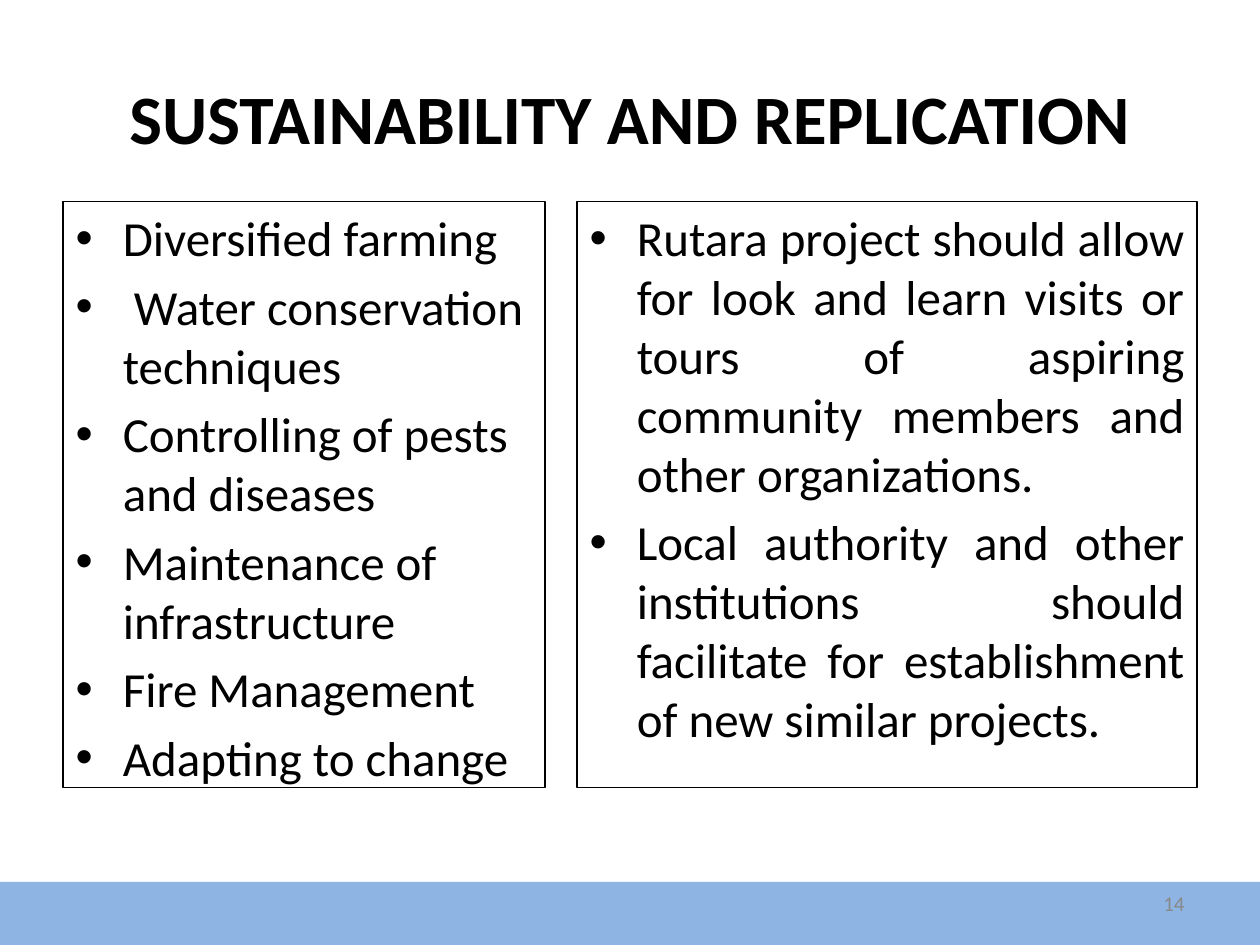
import pptx
import pptx.util
import pptx.dml.color
import pptx.enum.shapes
import pptx.enum.text
from dataclasses import dataclass

Cm, Pt = pptx.util.Cm, pptx.util.Pt
ALIGN = pptx.enum.text.PP_ALIGN
ANCHOR = pptx.enum.text.MSO_ANCHOR

TITLE = "SUSTAINABILITY AND REPLICATION"
PRACTICES = [
    "Diversified farming",
    " Water conservation techniques",
    "Controlling of pests and diseases",
    "Maintenance of infrastructure",
    "Fire Management",
    "Adapting to change",
]
REPLICATION = [
    "Rutara project should allow for look and learn visits or tours of "
    "aspiring community members and other organizations.",
    "Local authority and other institutions should facilitate for "
    "establishment of new similar projects.",
]
PAGE_NUMBER = "14"


@dataclass(frozen=True)
class Theme:
    font: str = "Calibri"
    ink: str = "000000"
    band: str = "8EB4E3"
    muted: str = "898989"
    title_size: float = 39.6
    body_size: float = 28
    number_size: float = 12
    outline: float = 0.75


THEME = Theme()
PAGE_WIDTH, PAGE_HEIGHT = 25.4, 19.05
MARGIN = 1.27
CONTENT_WIDTH = PAGE_WIDTH - 2 * MARGIN
LIST_TOP, LIST_HEIGHT = 4.06, 11.81
LEFT_WIDTH, GUTTER = 9.72, 0.64
RIGHT_LEFT = MARGIN + LEFT_WIDTH + GUTTER
RIGHT_WIDTH = PAGE_WIDTH - MARGIN - RIGHT_LEFT
BAND_TOP = 17.78


def color(value):
    return pptx.dml.color.RGBColor.from_string(value)


def place(box, left, top, width, height):
    box.left, box.top = Cm(left), Cm(top)
    box.width, box.height = Cm(width), Cm(height)


def write(box, lines, size, ink, align, anchor, bold=False):
    """Fill a box with one formatted paragraph per line."""
    frame = box.text_frame
    frame.word_wrap = True
    frame.auto_size = pptx.enum.text.MSO_AUTO_SIZE.NONE
    frame.vertical_anchor = anchor
    for index, line in enumerate(lines):
        para = frame.add_paragraph() if index else frame.paragraphs[0]
        para.alignment = align
        span = para.add_run()
        span.text = line
        span.font.name = THEME.font
        span.font.size = Pt(size)
        span.font.bold = bold
        span.font.color.rgb = color(ink)


def add_list(box, left, width, lines, align):
    """Turn a body placeholder into an outlined bullet list."""
    place(box, left, LIST_TOP, width, LIST_HEIGHT)
    box.line.color.rgb = color(THEME.ink)
    box.line.width = Pt(THEME.outline)
    write(box, lines, THEME.body_size, THEME.ink, align, ANCHOR.TOP)


def main():
    deck = pptx.Presentation()
    deck.slide_width, deck.slide_height = Cm(PAGE_WIDTH), Cm(PAGE_HEIGHT)
    page = deck.slides.add_slide(deck.slide_layouts.get_by_name("Two Content"))
    title, practices, replication = page.placeholders

    place(title, MARGIN, 0.76, CONTENT_WIDTH, 3.18)
    write(title, [TITLE], THEME.title_size, THEME.ink,
          ALIGN.CENTER, ANCHOR.MIDDLE, bold=True)

    add_list(practices, MARGIN, LEFT_WIDTH, PRACTICES, ALIGN.LEFT)
    add_list(replication, RIGHT_LEFT, RIGHT_WIDTH, REPLICATION, ALIGN.JUSTIFY)

    band = page.shapes.add_shape(
        pptx.enum.shapes.MSO_SHAPE.RECTANGLE,
        0, Cm(BAND_TOP), Cm(PAGE_WIDTH), Cm(PAGE_HEIGHT - BAND_TOP))
    band.shadow.inherit = False
    band.fill.solid()
    band.fill.fore_color.rgb = color(THEME.band)
    band.line.fill.background()

    number_width = 5.93
    number = page.shapes.add_textbox(
        Cm(PAGE_WIDTH - MARGIN - number_width), Cm(17.7),
        Cm(number_width), Cm(1.01))
    write(number, [PAGE_NUMBER], THEME.number_size, THEME.muted,
          ALIGN.RIGHT, ANCHOR.MIDDLE)

    deck.save("out.pptx")


if __name__ == "__main__":
    main()
